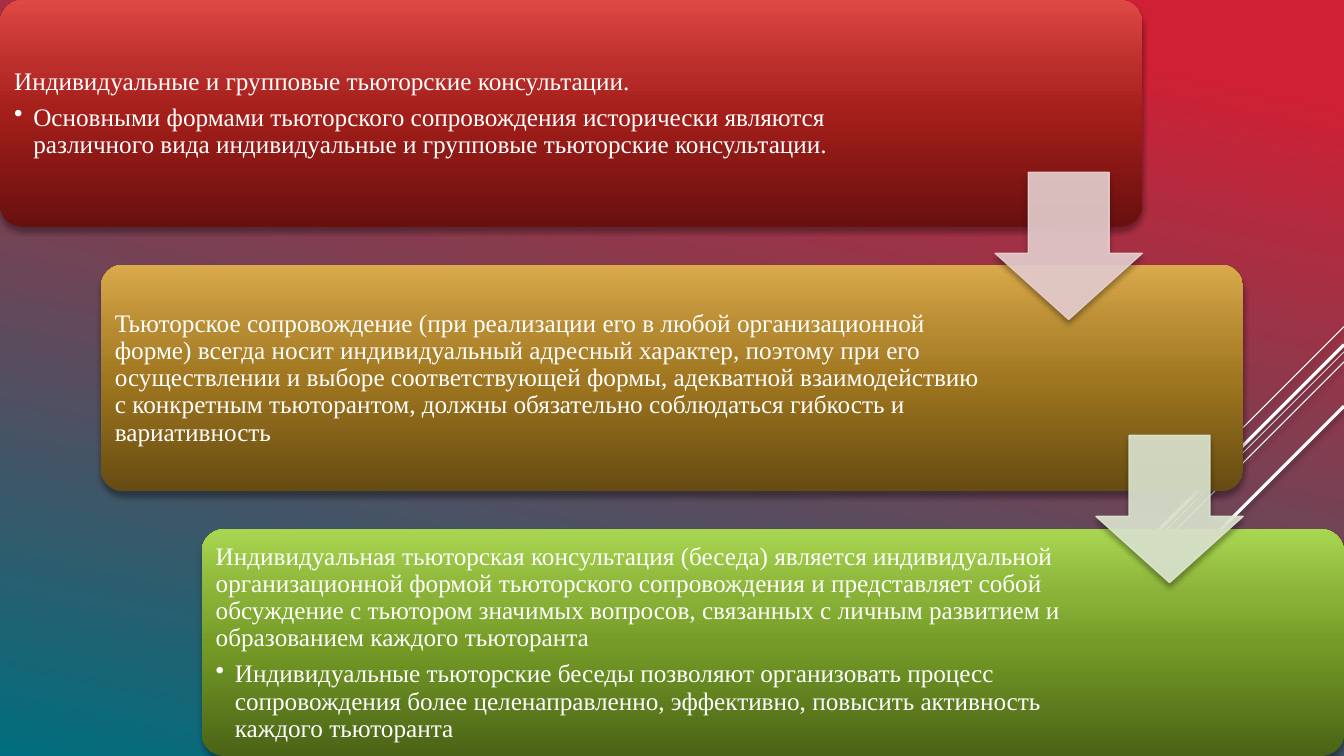
import lxml.etree
import pptx
import pptx.dml.color
import pptx.enum.shapes
import pptx.enum.text
import pptx.oxml.ns
import pptx.util

Inches = pptx.util.Inches
Pt = pptx.util.Pt
RGBColor = pptx.dml.color.RGBColor
MSO_SHAPE = pptx.enum.shapes.MSO_SHAPE
qn = pptx.oxml.ns.qn

WHITE = RGBColor(0xFF, 0xFF, 0xFF)
BLACK = RGBColor(0x00, 0x00, 0x00)
BACKGROUND = [(10, RGBColor(0xCF, 0x20, 0x35)), (100, RGBColor(0x00, 0x6E, 0x7E))]
RED = [RGBColor(0x68, 0x10, 0x0E), RGBColor(0xA4, 0x1E, 0x1A),
       RGBColor(0xB9, 0x2E, 0x2A), RGBColor(0xDF, 0x48, 0x45)]
GOLD = [RGBColor(0x66, 0x4B, 0x12), RGBColor(0xA0, 0x77, 0x20),
        RGBColor(0xB5, 0x8A, 0x31), RGBColor(0xDA, 0xA9, 0x4B)]
GREEN = [RGBColor(0x4A, 0x63, 0x16), RGBColor(0x76, 0x9C, 0x27),
         RGBColor(0x89, 0xB1, 0x37), RGBColor(0xA9, 0xD6, 0x51)]
PALE_PINK = RGBColor(0xE8, 0xD0, 0xD0)
PALE_GREEN = RGBColor(0xDE, 0xE7, 0xD1)


def set_gradient(fill, owner, stops, angle):
    """Give the fill of the owner element a gradient, angle in degrees clockwise."""
    fill.solid()
    solid = owner.find(".//" + qn("a:solidFill"))
    gradient = lxml.etree.Element(qn("a:gradFill"), rotWithShape="1")
    stop_list = lxml.etree.SubElement(gradient, qn("a:gsLst"))
    for position, color in stops:
        stop = lxml.etree.SubElement(stop_list, qn("a:gs"), pos=str(position * 1000))
        lxml.etree.SubElement(stop, qn("a:srgbClr"), val=str(color))
    lxml.etree.SubElement(gradient, qn("a:lin"), ang=str(angle * 60000), scaled="0")
    solid.getparent().replace(solid, gradient)


def add_shadow(shape):
    effects = lxml.etree.SubElement(shape.element.spPr, qn("a:effectLst"))
    shadow = lxml.etree.SubElement(
        effects, qn("a:outerShdw"), blurRad=str(Pt(4)), dist=str(Pt(3)),
        dir=str(90 * 60000), algn="ctr", rotWithShape="0")
    color = lxml.etree.SubElement(shadow, qn("a:srgbClr"), val=str(BLACK))
    lxml.etree.SubElement(color, qn("a:alpha"), val="35000")


presentation = pptx.Presentation()
presentation.slide_width = Inches(13.33)
presentation.slide_height = Inches(7.5)
slide = presentation.slides.add_slide(presentation.slide_layouts[6])
shapes = slide.shapes
set_gradient(slide.background.fill, slide.element, BACKGROUND, 102)

# Diagonal lines run down at 45 degrees from the right edge: top, length, width
for top, run_length, width in [(3.24, 1, 0.75), (3.49, 3.26, 0.75), (3.59, 2.07, 0.75),
                               (3.42, 1.91, 2.25), (4.03, 1.39, 2.25)]:
    diagonal = shapes.add_connector(
        pptx.enum.shapes.MSO_CONNECTOR.STRAIGHT, Inches(13.33), Inches(top),
        Inches(13.33 - run_length), Inches(top + run_length))
    diagonal.line.color.rgb = WHITE
    diagonal.line.width = Pt(width)
    add_shadow(diagonal)

# Cards: gradient colours, text width, heading, bullet
cards = [
    (RED, 8.91, "Индивидуальные и групповые тьюторские консультации.",
     "Основными формами тьюторского сопровождения исторически являются различного вида "
     "индивидуальные и групповые тьюторские консультации."),
    (GOLD, 8.74,
     "Тьюторское сопровождение (при реализации его в любой организационной форме) всегда "
     "носит индивидуальный адресный характер, поэтому при его осуществлении и выборе "
     "соответствующей формы, адекватной взаимодействию с конкретным тьюторантом, должны "
     "обязательно соблюдаться гибкость и вариативность", None),
    (GREEN, 8.74,
     "Индивидуальная тьюторская консультация (беседа) является индивидуальной "
     "организационной формой тьюторского сопровождения и представляет собой обсуждение с "
     "тьютором значимых вопросов, связанных с личным развитием и образованием каждого "
     "тьюторанта",
     "Индивидуальные тьюторские беседы позволяют организовать процесс сопровождения более "
     "целенаправленно, эффективно, повысить активность каждого тьюторанта"),
]
for index, (colors, text_width, heading, bullet) in enumerate(cards):
    left, top = index, index * 2.625
    card = shapes.add_shape(MSO_SHAPE.ROUNDED_RECTANGLE, Inches(left), Inches(top),
                            Inches(11.33), Inches(2.25))
    card.adjustments[0] = 0.1
    set_gradient(card.fill, card.element, zip((0, 50, 70, 100), colors), 270)
    card.line.fill.background()
    add_shadow(card)

    text_box = shapes.add_textbox(Inches(left + 0.07), Inches(top + 0.07),
                                  Inches(text_width), Inches(2.12))
    frame = text_box.text_frame
    frame.word_wrap = True
    frame.vertical_anchor = pptx.enum.text.MSO_ANCHOR.MIDDLE
    frame.margin_left = frame.margin_right = Inches(0.07)
    frame.margin_top = frame.margin_bottom = Inches(0.07)
    paragraph = frame.paragraphs[0]
    for text in filter(None, (heading, bullet)):
        if text == bullet:
            paragraph = frame.add_paragraph()
            paragraph.level = 1
        paragraph.line_spacing = 0.9
        paragraph.space_after = Pt(2.7 if text == bullet else 6.3)
        if text == bullet:
            properties = paragraph._p.get_or_add_pPr()
            properties.set("marL", str(Inches(0.19)))
            properties.set("indent", str(Inches(-0.19)))
            lxml.etree.SubElement(properties, qn("a:buChar"), char="•")
        run = paragraph.add_run()
        run.text = text
        run.font.size = Pt(18)
        run.font.name = "Times New Roman"
        run.font.color.rgb = WHITE

for index, color in enumerate((PALE_PINK, PALE_GREEN)):
    arrow = shapes.add_shape(MSO_SHAPE.DOWN_ARROW, Inches(9.87 + index),
                             Inches(1.71 + index * 2.61), Inches(1.46), Inches(1.46))
    arrow.adjustments[0] = 0.55
    arrow.adjustments[1] = 0.45
    arrow.fill.solid()
    arrow.fill.fore_color.rgb = color
    arrow.line.color.rgb = color
    arrow.line.width = Pt(1)
    for color_element in arrow.element.spPr.iter(qn("a:srgbClr")):
        lxml.etree.SubElement(color_element, qn("a:alpha"), val="90000")
    add_shadow(arrow)

presentation.save("out.pptx")
